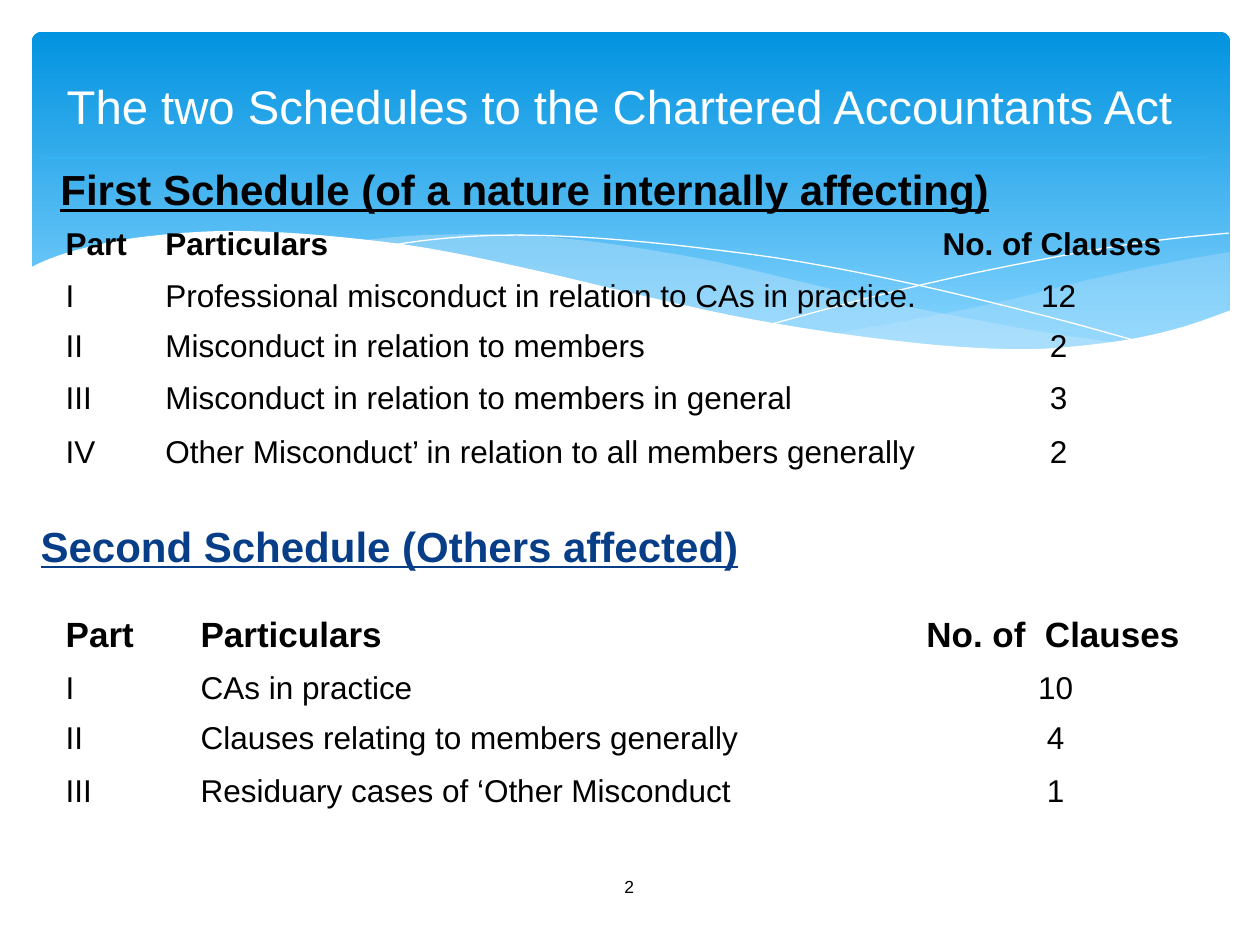
from dataclasses import dataclass

import pptx
import pptx.dml.color
import pptx.enum.shapes
import pptx.enum.text
import pptx.oxml
import pptx.oxml.ns
import pptx.util
from pptx.util import Cm

ALIGN = pptx.enum.text.PP_ALIGN
MIDDLE = pptx.enum.text.MSO_ANCHOR.MIDDLE
NO_GRID = "{2D5ABB26-0587-4C30-8999-92F81FD0307C}"


@dataclass(frozen=True)
class Theme:
    font: str = "Arial"
    black: str = "000000"
    white: str = "FFFFFF"
    navy: str = "073E87"
    rule: str = "31B6FD"
    pale: str = "C6E7FC"
    deep: str = "0293E0"
    light: str = "83D3FE"
    title: int = 27
    head: int = 24
    large: int = 20
    body: int = 18
    small: int = 10


THEME = Theme()

# Wave outlines in cm
CREST = [(24.79, 5.08), (23.39, 5.33), (21.87, 5.66), (20.45, 6.02),
         (19.13, 6.3), (17.93, 6.53), (16.79, 6.73)]
CREST_LOW = [(16.79, 6.73), (17.91, 6.88), (18.92, 6.99), (19.84, 7.04),
             (20.68, 7.06), (21.44, 7.04), (22.15, 6.96), (22.78, 6.86),
             (23.39, 6.73), (24.1, 6.53), (24.79, 6.27)]
SWELL = [(22.68, 6.93), (21.26, 6.73), (19.69, 6.45), (17.93, 6.1),
         (15.98, 5.64), (14.45, 5.28), (13.06, 5.03), (11.79, 4.85),
         (10.67, 4.75), (9.65, 4.72), (8.33, 4.75), (7.26, 4.85)]
SWELL_LOW = [(7.26, 4.85), (8.69, 5.05), (10.26, 5.36), (12.47, 5.89),
             (14.38, 6.3), (16.1, 6.63), (17.65, 6.86), (19, 7.01),
             (20.22, 7.09), (21.29, 7.06), (22.68, 6.93)]
FALL = [(7.85, 4.95), (8.71, 4.83), (9.83, 4.75), (11, 4.75), (12.42, 4.83),
        (14.12, 5), (16.15, 5.28), (18.47, 5.74), (21.11, 6.38), (23.04, 6.91)]
RISE = [(15.57, 6.53), (17.65, 5.97), (19.71, 5.49), (22, 5.05),
        (23.47, 4.83), (24.77, 4.7)]
SHORE = [(24.82, 6.25), (23.88, 6.58), (22.83, 6.83), (21.59, 6.99),
         (20.55, 7.04), (19.33, 6.99), (17.98, 6.86), (16.43, 6.65),
         (14.71, 6.35), (12.78, 5.92), (10.62, 5.41), (8.61, 5),
         (6.88, 4.78), (5.36, 4.67), (4.09, 4.67), (2.69, 4.8),
         (1.7, 5), (1.02, 5.21), (0.58, 5.41)]
BASE = [(0.58, 8.36), (24.82, 8.36)]

FIRST = [
    ("Part", "Particulars", "No. of Clauses"),
    ("I", "Professional misconduct in relation to CAs in practice.", "12"),
    ("II", "Misconduct in relation to members", "2"),
    ("III", "Misconduct in relation to members in general", "3"),
    ("IV", "Other Misconduct’ in relation to all members generally", "2"),
]
SECOND = [
    ("Part", "Particulars", "No. of  Clauses"),
    ("I", "CAs in practice", "10"),
    ("II", "Clauses relating to members generally", "4"),
    ("III", "Residuary cases of ‘Other Misconduct", "1"),
]


def rgb(hue):
    return pptx.dml.color.RGBColor.from_string(hue)


def smooth(knots, steps=4):
    """Points of a Catmull-Rom curve through the knots."""
    ends = [knots[0], *knots, knots[-1]]
    curve = []
    for a, b, c, d in zip(ends, ends[1:], ends[2:], ends[3:]):
        for t in (i / steps for i in range(steps)):
            curve.append(tuple(
                (2 * q + (r - p) * t + (2 * p - 5 * q + 4 * r - s) * t ** 2
                 + (3 * q - p - 3 * r + s) * t ** 3) / 2
                for p, q, r, s in zip(a, b, c, d)))
    return curve + [knots[-1]]


def add_wave(slide, points, fill=None, alpha=100):
    """A filled wave, or a white hairline when there is no fill."""
    start, *rest = [(Cm(x), Cm(y)) for x, y in points]
    pen = slide.shapes.build_freeform(*start)
    pen.add_line_segments(rest, close=fill is not None)
    wave = pen.convert_to_shape()
    wave.shadow.inherit = False
    if fill is None:
        wave.fill.background()
        wave.line.color.rgb = rgb(THEME.white)
        wave.line.width = 0
        return
    wave.line.fill.background()
    wave.fill.solid()
    wave.fill.fore_color.rgb = rgb(fill)
    if alpha < 100:
        tint = wave.fill._xPr.find(".//" + pptx.oxml.ns.qn("a:srgbClr"))
        tint.append(pptx.oxml.parse_xml(
            f'<a:alpha {pptx.oxml.ns.nsdecls("a")} val="{alpha * 1000}"/>'))


def add_band(slide):
    band = slide.shapes.add_shape(
        pptx.enum.shapes.MSO_SHAPE.ROUNDED_RECTANGLE,
        Cm(0.64), Cm(0.64), Cm(24.16), Cm(6.86))
    band.adjustments[0] = 0.03
    band.shadow.inherit = False
    band.line.fill.background()
    band.fill.gradient()
    band.fill.gradient_angle = 270
    for stop, hue, place in zip(band.fill.gradient_stops,
                                (THEME.deep, THEME.light), (0, 0.9)):
        stop.color.rgb = rgb(hue)
        stop.position = place


def style(para, size, hue, bold=False, under=False):
    for run in para.runs:
        font = run.font
        font.name, font.size = THEME.font, pptx.util.Pt(size)
        font.bold, font.underline = bold, under
        font.color.rgb = rgb(hue)


def set_title(slide, text):
    title = slide.shapes.title
    title.element.getparent().append(title.element)  # bring to front
    title.left, title.top = Cm(0.64), Cm(1.07)
    title.width, title.height = Cm(23.7), Cm(2.11)
    frame = title.text_frame
    frame.text = text
    frame.vertical_anchor = MIDDLE
    frame.auto_size = pptx.enum.text.MSO_AUTO_SIZE.NONE
    frame.paragraphs[0].alignment = ALIGN.CENTER
    style(frame.paragraphs[0], THEME.title, THEME.white)


def add_text(slide, text, left, top, width, height):
    box = slide.shapes.add_textbox(Cm(left), Cm(top), Cm(width), Cm(height))
    frame = box.text_frame
    frame.word_wrap = True
    frame.text = text
    return frame


def add_head(slide, text, left, top, hue):
    frame = add_text(slide, text, left, top, 22.86, 1.47)
    frame.margin_left = Cm(1.02)
    style(frame.paragraphs[0], THEME.head, hue, bold=True, under=True)


def add_grid(slide, data, top, widths, heights, size):
    frame = slide.shapes.add_table(
        len(data), len(widths), Cm(1.07), Cm(top),
        Cm(sum(widths)), Cm(sum(heights)))
    grid = frame.table
    grid.first_row = grid.horz_banding = False
    grid._tbl.tblPr.find(pptx.oxml.ns.qn("a:tableStyleId")).text = NO_GRID
    for col, width in zip(grid.columns, widths):
        col.width = Cm(width)
    for i, (row, height) in enumerate(zip(data, heights)):
        grid.rows[i].height = Cm(height)
        for j, text in enumerate(row):
            cell = grid.cell(i, j)
            cell.fill.background()
            cell.text_frame.text = text
            para = cell.text_frame.paragraphs[0]
            if i and j == 2:
                para.alignment = ALIGN.CENTER
            style(para, THEME.body if i else size, THEME.black, bold=not i)


def add_rule(slide):
    rule = slide.shapes.add_connector(
        pptx.enum.shapes.MSO_CONNECTOR.STRAIGHT,
        Cm(0.85), Cm(3.18), Cm(24.34), Cm(3.18))
    rule.line.color.rgb = rgb(THEME.rule)
    rule.line.width = pptx.util.Pt(0.75)
    rule.element.spPr.append(pptx.oxml.parse_xml(
        f'<a:effectLst {pptx.oxml.ns.nsdecls("a")}/>'))


def main():
    deck = pptx.Presentation()
    deck.slide_width, deck.slide_height = Cm(25.4), Cm(19.05)
    slide = deck.slides.add_slide(deck.slide_layouts[5])

    # Blue band with waves
    add_band(slide)
    add_wave(slide, smooth(CREST) + smooth(CREST_LOW), THEME.pale, 29)
    add_wave(slide, smooth(SWELL) + smooth(SWELL_LOW), THEME.pale, 40)
    add_wave(slide, smooth(FALL))
    add_wave(slide, smooth(RISE))
    add_wave(slide, smooth(SHORE) + BASE, THEME.white)

    # Title and rule
    set_title(slide, "The two Schedules to the Chartered Accountants Act")
    add_rule(slide)

    # Schedules
    add_head(slide, "First Schedule (of a nature internally affecting)",
             0.2, 3.18, THEME.black)
    add_grid(slide, FIRST, 4.45, (2.01, 15.67, 5.18),
             (1.04, 1.02, 1.04, 1.09, 1.04), THEME.body)
    add_head(slide, "Second Schedule (Others affected)",
             -0.2, 10.36, THEME.navy)
    add_grid(slide, SECOND, 12.29, (2.72, 14.63, 5.72),
             (1.09, 1.02, 1.07, 1.04), THEME.large)

    # Page number
    page = add_text(slide, "2", 11.07, 17.37, 3.23, 1.02)
    page.vertical_anchor = MIDDLE
    page.paragraphs[0].alignment = ALIGN.CENTER
    style(page.paragraphs[0], THEME.small, THEME.black)

    deck.save("out.pptx")


if __name__ == "__main__":
    main()
